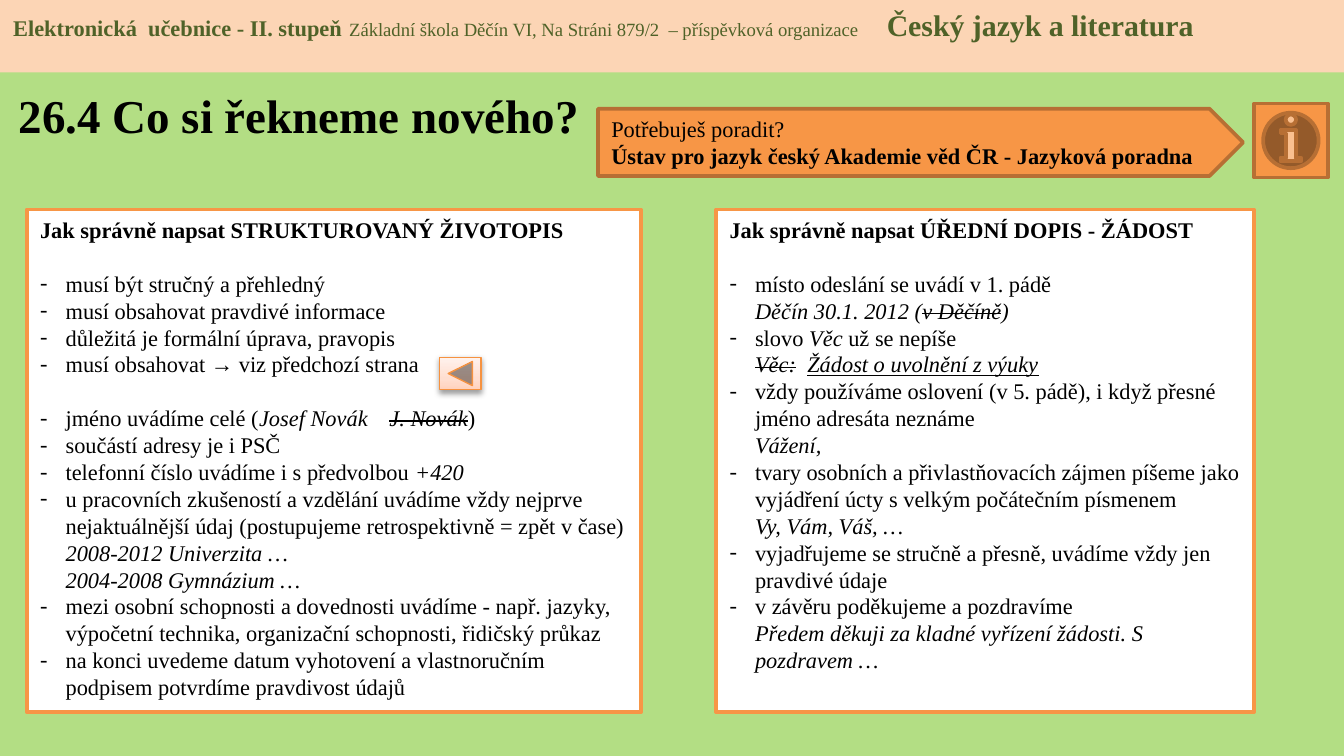
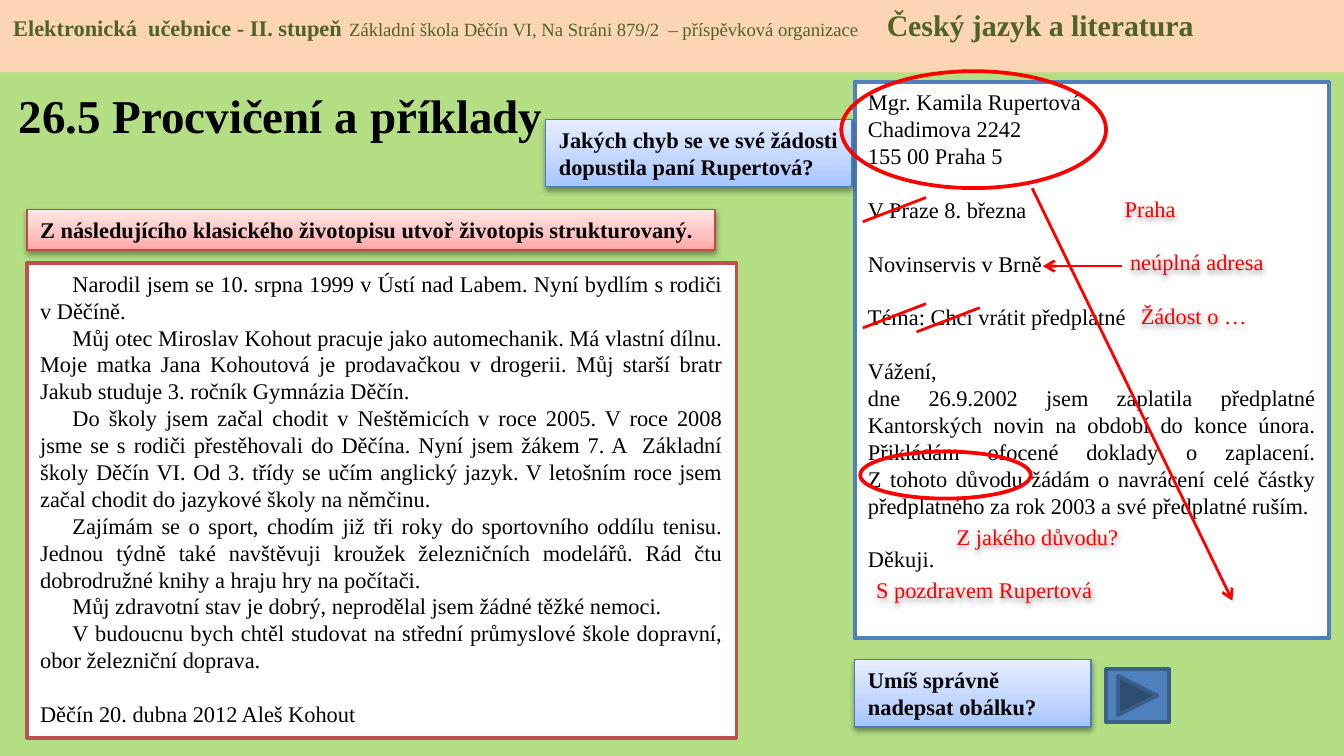
from lxml.etree import SubElement
from pptx import Presentation
from pptx.dml.color import RGBColor as Rgb
from pptx.enum.shapes import MSO_CONNECTOR as Link, MSO_SHAPE as Form
from pptx.enum.text import MSO_ANCHOR as Anchor, PP_ALIGN as Align
from pptx.oxml.ns import qn
from pptx.util import Inches, Pt

COLS, ROWS = 100, 56.25
FONT = "Times New Roman"
LINE_GAP = 14.4
HANG = 1.9
COLORS = {
    "page": "B3DE84", "band": "FCD5B5", "band_text": "4F6228",
    "text": "000000", "white": "FFFFFF", "mark": "FF0000",
    "orange": "F79646", "orange_edge": "B76F34", "glow_edge": "F69240",
    "red": "C0504D", "red_edge": "BF4C48",
    "blue": "4F81BD", "blue_edge": "4B7EBC", "blue_dark": "3A5F8C",
}
GRADIENTS = {
    "orange": ("FFD2BD", "FFDED0", "FFF2ED"),
    "red": ("FFA6A5", "FFC0BF", "FFE7E7"),
    "blue": ("A4C4FF", "BFD4FF", "E6EEFF"),
}
STOPS = (0, 35, 100)
FLAGS = {"b": "bold", "i": "italic", "u": "underline"}


def para(*spans, **layout):
    """One paragraph: spans are texts or (text, format) pairs."""
    pairs = [(span, {}) if isinstance(span, str) else span for span in spans]
    return pairs, layout


def styled(text, flags="", **values):
    return text, {"flags": flags, **values}


def item(*spans, **layout):
    return para(*spans, bullet="-", left=HANG, indent=-HANG, **layout)


def story(text):
    return para(text, align=Align.JUSTIFY, indent=2.4)


class Page:
    """The style of the deck and the slide being filled."""

    def __init__(self, deck):
        self.deck = deck
        self.slide = None

    # Grid
    def x(self, cols):
        return round(self.deck.slide_width * cols / COLS)

    def y(self, rows):
        return round(self.deck.slide_height * rows / ROWS)

    def place(self, at):
        left, top, width, height = at
        return self.x(left), self.y(top), self.x(width), self.y(height)

    # Text
    def add_text(self, box, paras, size=12, color="text", flags="", anchor=Anchor.TOP):
        frame = box.text_frame
        frame.word_wrap = True
        frame.vertical_anchor = anchor
        for number, (spans, layout) in enumerate(paras):
            line = frame.paragraphs[0] if number == 0 else frame.add_paragraph()
            self.lay_out(line, **layout)
            for text, values in spans:
                self.add_span(line, text, **{"size": size, "color": color,
                                             "flags": flags, **values})

    def lay_out(self, line, align=Align.LEFT, gap=0, left=0, indent=0,
                bullet=None, tabs=()):
        line.alignment = align
        line.space_before = Pt(gap)
        props = line._p.get_or_add_pPr()
        props.set("marL", str(self.x(left)))
        props.set("indent", str(self.x(indent)))
        if bullet:
            SubElement(props, qn("a:buFont"), typeface=FONT)
            SubElement(props, qn("a:buChar"), char=bullet)
        if tabs:
            stops = SubElement(props, qn("a:tabLst"))
            for cols, side in tabs:
                SubElement(stops, qn("a:tab"), pos=str(self.x(cols)), algn=side)

    def add_span(self, line, text, size, color, flags):
        for number, part in enumerate(text.split("\n")):
            if number:
                line.add_line_break()
            if not part:
                continue
            span = line.add_run()
            span.text = part
            values = {"name": FONT, "size": Pt(size)}
            values.update({name: flag in flags for flag, name in FLAGS.items()})
            for name, value in values.items():
                setattr(span.font, name, value)
            span.font.color.rgb = Rgb.from_string(COLORS[color])
            if "s" in flags:
                span._r.get_or_add_rPr().set("strike", "sngStrike")

    # Shapes
    def shape(self, form, at, fill=None, edge=None, weight=2, gradient=None):
        box = self.slide.shapes.add_shape(form, *self.place(at))
        box.shadow.inherit = False
        if gradient:
            self.blend(box, GRADIENTS[gradient])
            self.cast_shadow(box)
        elif fill:
            box.fill.solid()
            box.fill.fore_color.rgb = Rgb.from_string(COLORS[fill])
        else:
            box.fill.background()
        if edge:
            box.line.color.rgb = Rgb.from_string(COLORS[edge])
            box.line.width = Pt(weight)
        else:
            box.line.fill.background()
        return box

    def blend(self, box, hues):
        box.fill.gradient()
        box.fill.gradient_angle = 90
        stops = box._element.spPr.find(".//" + qn("a:gsLst"))
        stops.clear()
        for share, hue in zip(STOPS, hues):
            stop = SubElement(stops, qn("a:gs"), pos=str(share * 1000))
            SubElement(stop, qn("a:srgbClr"), val=hue)

    def cast_shadow(self, box):
        box.shadow.inherit = False
        effects = box._element.spPr.find(qn("a:effectLst"))
        shade = SubElement(effects, qn("a:outerShdw"), blurRad=str(Pt(3.1)),
                           dist=str(Pt(1.6)), dir="5400000", rotWithShape="0")
        tone = SubElement(shade, qn("a:srgbClr"), val=COLORS["text"])
        SubElement(tone, qn("a:alpha"), val="38000")

    def panel(self, at, edge, paras):
        self.add_text(self.shape(Form.RECTANGLE, at, "white", edge), paras)

    def task(self, at, hue, text):
        box = self.shape(Form.RECTANGLE, at, edge=hue + "_edge", weight=0.75, gradient=hue)
        self.add_text(box, [para(text)], flags="b")

    def correction(self, at, text):
        box = self.slide.shapes.add_textbox(*self.place(at))
        self.cast_shadow(box)
        self.add_text(box, [para(text)], color="mark")

    def ring(self, at):
        self.shape(Form.OVAL, at, edge="mark")

    def stroke(self, start, end, arrow=False):
        link = self.slide.shapes.add_connector(
            Link.STRAIGHT, self.x(start[0]), self.y(start[1]), self.x(end[0]), self.y(end[1]))
        link.line.color.rgb = Rgb.from_string(COLORS["mark"])
        link.line.width = Pt(1.5)
        if arrow:
            SubElement(link.line._get_or_add_ln(), qn("a:tailEnd"), type="arrow")
        SubElement(link._element.spPr, qn("a:effectLst"))

    # Shared frame of every slide
    def start(self, title, width):
        self.slide = self.deck.slides.add_slide(self.deck.slide_layouts[6])
        back = self.slide.background.fill
        back.solid()
        back.fore_color.rgb = Rgb.from_string(COLORS["page"])
        box = self.slide.shapes.add_textbox(*self.place((0.4, 5.3, width, 6.5)))
        self.add_text(box, [para(title)], size=25.2, flags="b", anchor=Anchor.MIDDLE)
        band = self.shape(Form.RECTANGLE, (0, 0, COLS, 5.4), "band")
        self.add_text(band, [para(
            styled("Elektronická  učebnice - II. stupeň\t", "b"),
            styled("Základní škola Děčín VI, Na Stráni 879/2  – příspěvková organizace\t", size=10),
            styled("Český jazyk a literatura", "b", size=16),
            tabs=((32, "l"), (97.5, "r")))], color="band_text")


def build_rules(page):
    page.start("26.4 Co si řekneme nového?", 46.9)

    # Formal letter
    page.panel((53.3, 15.6, 40, 37.4), "orange", [
        para(styled("Jak správně napsat ÚŘEDNÍ DOPIS - ŽÁDOST", "b")),
        item("místo odeslání se uvádí v 1. pádě\n", styled("Děčín 30.1. 2012 (", "i"),
             styled("v Děčíně", "is"), styled(")", "i"), gap=LINE_GAP),
        item("slovo ", styled("Věc", "i"), " už se nepíše\n", styled("Věc:", "is"),
             styled("  ", "i"), styled("Žádost o uvolnění z výuky", "iu")),
        item("vždy používáme oslovení (v 5. pádě), i když přesné jméno adresáta neznáme\n",
             styled("Vážení,", "i")),
        item("tvary osobních a přivlastňovacích zájmen píšeme jako vyjádření úcty "
             "s velkým počátečním písmenem\n", styled("Vy, Vám, Váš, …", "i")),
        item("vyjadřujeme se stručně a přesně, uvádíme vždy jen pravdivé údaje"),
        item("v závěru poděkujeme a pozdravíme\n",
             styled("Předem děkuji za kladné vyřízení žádosti. S pozdravem …", "i")),
    ])

    # Structured CV
    page.panel((2, 15.6, 45.7, 37.4), "orange", [
        para(styled("Jak správně napsat STRUKTUROVANÝ ŽIVOTOPIS", "b")),
        item("musí být stručný a přehledný", gap=LINE_GAP),
        item("musí obsahovat pravdivé informace"),
        item("důležitá je formální úprava, pravopis"),
        item("musí obsahovat → viz předchozí strana"),
        item("jméno uvádíme celé (", styled("Josef Novák\t", "i"), styled("J. Novák", "is"), ")",
             gap=LINE_GAP, tabs=((26, "l"),)),
        item("součástí adresy je i PSČ"),
        item("telefonní číslo uvádíme i s předvolbou ", styled("+420", "i")),
        item("u pracovních zkušeností a vzdělání uvádíme vždy nejprve nejaktuálnější údaj "
             "(postupujeme retrospektivně = zpět v čase)\n",
             styled("2008-2012 Univerzita …\n2004-2008 Gymnázium …", "i")),
        item("mezi osobní schopnosti a dovednosti uvádíme - např. jazyky, výpočetní technika, "
             "organizační schopnosti, řidičský průkaz"),
        item("na konci uvedeme datum vyhotovení a vlastnoručním podpisem potvrdíme "
             "pravdivost údajů"),
    ])

    # Help and navigation
    page.shape(Form.ACTION_BUTTON_INFORMATION, (93.3, 7.7, 5.5, 5.5), "orange", "orange_edge")
    advice = page.shape(Form.PENTAGON, (44.5, 8.1, 48, 5), "orange", "orange_edge")
    page.add_text(advice, [
        para("Potřebuješ poradit?"),
        para(styled("Ústav pro jazyk český Akademie věd ČR - Jazyková poradna", "b")),
    ])
    page.shape(Form.ACTION_BUTTON_BACK_OR_PREVIOUS, (32.7, 26.6, 3.1, 2.4),
               edge="glow_edge", weight=0.75, gradient="orange")


def build_practice(page):
    page.start("26.5 Procvičení a příklady", 43.7)

    # CV to be rewritten
    page.panel((2, 19.6, 52.8, 35.3), "red", [
        story("Narodil jsem se 10. srpna 1999 v Ústí nad Labem. Nyní bydlím s rodiči v Děčíně."),
        story("Můj otec Miroslav Kohout pracuje jako automechanik. Má vlastní dílnu. Moje matka "
              "Jana Kohoutová je prodavačkou v drogerii. Můj starší bratr Jakub studuje "
              "3. ročník Gymnázia Děčín."),
        story("Do školy jsem začal chodit v Neštěmicích v roce 2005. V roce 2008 jsme se "
              "s rodiči přestěhovali do Děčína. Nyní jsem žákem 7. A  Základní školy Děčín VI. "
              "Od 3. třídy se učím anglický jazyk. V letošním roce jsem začal chodit do "
              "jazykové školy na němčinu."),
        story("Zajímám se o sport, chodím již tři roky do sportovního oddílu tenisu. Jednou "
              "týdně také navštěvuji kroužek železničních modelářů. Rád čtu dobrodružné knihy "
              "a hraju hry na počítači."),
        story("Můj zdravotní stav je dobrý, neprodělal jsem žádné těžké nemoci."),
        story("V budoucnu bych chtěl studovat na střední průmyslové škole dopravní, "
              "obor železniční doprava."),
        para("Děčín 20. dubna 2012\tAleš Kohout", gap=LINE_GAP, tabs=((38.3, "l"),)),
    ])
    page.task((2, 15.6, 51.2, 3), "red",
              "Z následujícího klasického životopisu utvoř životopis strukturovaný.")

    # Letter with mistakes
    page.panel((63.6, 6.1, 35.3, 41.4), "blue", [
        para("Mgr. Kamila Rupertová"),
        para("Chadimova 2242\n155 00 Praha 5"),
        para("V Praze 8. března", gap=LINE_GAP),
        para("Novinservis v Brně", gap=LINE_GAP),
        para("Téma: Chci vrátit předplatné", gap=LINE_GAP),
        para("Vážení,", gap=LINE_GAP),
        para("dne 26.9.2002 jsem zaplatila předplatné\nKantorských novin na období do konce "
             "února. Přikládám ofocené doklady o zaplacení.\nZ tohoto důvodu žádám o navrácení "
             "celé částky předplatného za rok 2003 a své předplatné ruším.",
             align=Align.JUSTIFY),
        para("Děkuji.", gap=LINE_GAP),
    ])
    page.task((40.6, 8.9, 22.8, 5), "blue",
              "Jakých chyb se ve své žádosti dopustila paní Rupertová?")
    page.task((63.6, 49.1, 17.6, 5), "blue", "Umíš správně nadepsat obálku?")
    page.shape(Form.ACTION_BUTTON_FORWARD_OR_NEXT, (82.3, 49.8, 4.7, 3.9), "blue", "blue_dark")

    # Corrections in red
    for left, bottom in ((64.2, 24.4), (64.2, 16.5), (68.2, 24.7)):
        page.stroke((left, bottom), (left + 4.7, bottom - 1.8))
    page.stroke((76.8, 14), (91.7, 44.7), arrow=True)
    page.stroke((83.5, 19.8), (77.6, 19.8), arrow=True)
    page.ring((62.6, 5.3, 19.7, 8.7))
    page.ring((64, 33.6, 12.7, 3.5))
    for left, top, width, text in (
            (82.7, 14, 6.4, "Praha"),
            (83.1, 18, 12.2, "neúplná adresa"),
            (83.9, 22, 10.5, "Žádost o …"),
            (64.2, 42.4, 18.8, "S pozdravem Rupertová"),
            (70.2, 38.4, 15.7, "Z jakého důvodu?")):
        page.correction((left, top, width, 3), text)


def main():
    deck = Presentation()
    deck.slide_width, deck.slide_height = Inches(10), Inches(5.625)
    page = Page(deck)
    build_rules(page)
    build_practice(page)
    deck.save("out.pptx")


if __name__ == "__main__":
    main()
